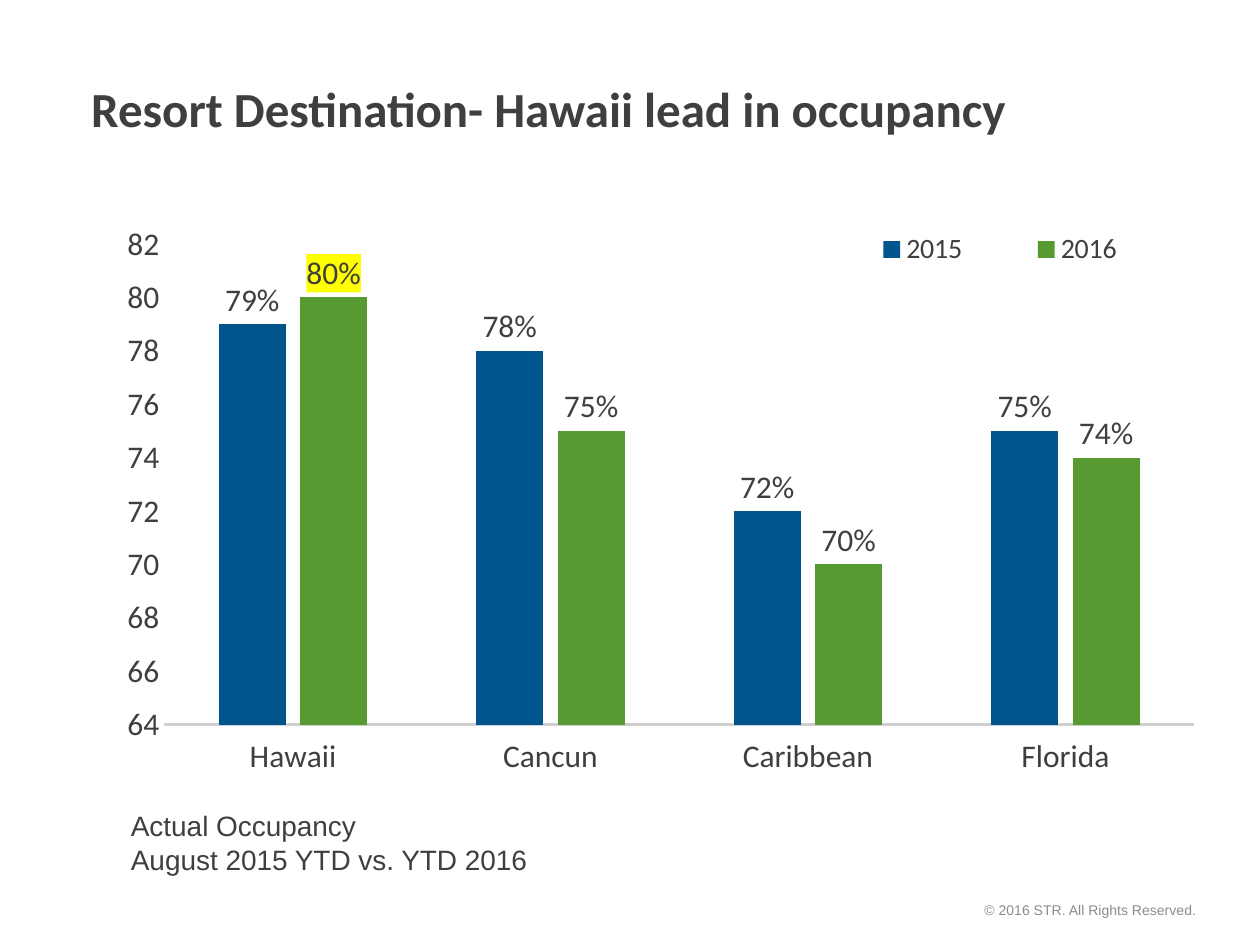
import lxml.etree
import pptx
import pptx.chart.data
import pptx.dml.color
import pptx.enum.chart
import pptx.enum.text
import pptx.oxml
import pptx.util
from pptx.util import Cm

COLORS = {
    "text": "3F3F3F",
    "credit": "8C8C8C",
    "axis": "CFCFCF",
    "2015": "00558C",
    "2016": "579A32",
    "highlight": "FFFF00",
}
OCCUPANCY = {
    "2015": (79, 78, 72, 75),
    "2016": (80, 75, 70, 74),
}
CHART_NS = "http://schemas.openxmlformats.org/drawingml/2006/chart"
DRAWING_NS = "http://schemas.openxmlformats.org/drawingml/2006/main"


def rgb(name):
    return pptx.dml.color.RGBColor.from_string(COLORS[name])


def add_text(text, left, top, width, height, size, font="Arial", color="text",
             bold=False, align="LEFT", anchor="TOP", bottom=0.13):
    box = slide.shapes.add_textbox(Cm(left), Cm(top), Cm(width), Cm(height))
    frame = box.text_frame
    frame.word_wrap = True
    frame.margin_bottom = Cm(bottom)
    frame.vertical_anchor = pptx.enum.text.MSO_ANCHOR[anchor]
    frame.text = text
    for paragraph in frame.paragraphs:
        paragraph.alignment = pptx.enum.text.PP_ALIGN[align]
        paragraph.font.size = pptx.util.Pt(size)
        paragraph.font.name = font
        paragraph.font.bold = bold
        paragraph.font.color.rgb = rgb(color)


presentation = pptx.Presentation()
presentation.slide_width = Cm(25.4)
presentation.slide_height = Cm(19.05)
slide = presentation.slides.add_slide(presentation.slide_layouts[6])

add_text("© 2016 STR. All Rights Reserved.", 17.72, 18.05, 6.65, 0.61, 8,
         color="credit", align="RIGHT")
add_text("Resort Destination- Hawaii lead in occupancy", 1.59, 1.32, 22.5, 2.24, 28,
         font="Calibri", bold=True, anchor="MIDDLE", bottom=0.67)

chart_data = pptx.chart.data.CategoryChartData()
chart_data.categories = ["Hawaii", "Cancun", "Caribbean", "Florida"]
for year, values in OCCUPANCY.items():
    chart_data.add_series(year, values)
chart = slide.shapes.add_chart(
    pptx.enum.chart.XL_CHART_TYPE.COLUMN_CLUSTERED,
    Cm(1.7), Cm(4.41), Cm(22.4), Cm(11.28), chart_data).chart
chart.has_title = False
chart.font.name = "Calibri"
chart.font.size = pptx.util.Pt(18)
chart.font.color.rgb = rgb("text")

category_axis = chart.category_axis
category_axis.tick_label_position = pptx.enum.chart.XL_TICK_LABEL_POSITION.LOW
category_axis.format.line.color.rgb = rgb("axis")
category_axis.format.line.width = pptx.util.Pt(1.5)
value_axis = chart.value_axis
value_axis.minimum_scale = 64
value_axis.maximum_scale = 82
value_axis.major_unit = 2
value_axis.has_major_gridlines = False
value_axis.format.line.fill.background()
value_axis.tick_labels.number_format = "0"
value_axis.tick_labels.number_format_is_linked = False
for axis in (category_axis, value_axis):
    axis.major_tick_mark = pptx.enum.chart.XL_TICK_MARK.NONE

chart.has_legend = True
chart.legend.position = pptx.enum.chart.XL_LEGEND_POSITION.TOP
chart.legend.include_in_layout = False
chart.legend.font.size = pptx.util.Pt(16)
chart.legend.font.name = "Calibri"
chart.legend.font.color.rgb = rgb("text")

plot = chart.plots[0]
plot.gap_width = 164
plot.overlap = -22
plot.vary_by_categories = False
outside_end = pptx.enum.chart.XL_LABEL_POSITION.OUTSIDE_END
for series in plot.series:
    series.format.fill.solid()
    series.format.fill.fore_color.rgb = rgb(series.name)
    labels = series.data_labels
    labels.show_value = True
    labels.position = outside_end
    labels.number_format = '0"%"'
    labels.number_format_is_linked = False

leader_label = plot.series[1].points[0].data_label
leader_label.font.size = pptx.util.Pt(18)
leader_label.font.color.rgb = rgb("text")
leader_label.position = outside_end
label_element = plot.series[1].data_labels._element.find(f"{{{CHART_NS}}}dLbl")
text_properties = label_element.find(f"{{{CHART_NS}}}txPr")
for old in label_element.findall(f"{{{CHART_NS}}}spPr"):
    label_element.remove(old)
for xml in (
    f'<c:numFmt xmlns:c="{CHART_NS}" formatCode="0&quot;%&quot;" sourceLinked="0"/>',
    f'<c:spPr xmlns:c="{CHART_NS}" xmlns:a="{DRAWING_NS}"><a:solidFill>'
    f'<a:srgbClr val="{COLORS["highlight"]}"/></a:solidFill></c:spPr>',
):
    text_properties.addprevious(pptx.oxml.parse_xml(xml))

plot_area = chart._chartSpace.chart.plotArea
for old in plot_area.findall(f"{{{CHART_NS}}}layout"):
    plot_area.remove(old)
for parent, index, target, bounds in (
    (plot_area, 0, '<c:layoutTarget val="inner"/>', (0.072, 0.045, 0.928, 0.859)),
    (chart.legend._element, 1, "", (0.66, 0.02, 0.33, 0.07)),
):
    modes = "".join(f'<c:{edge}Mode val="edge"/>' for edge in "xy")
    sizes = "".join(f'<c:{key} val="{value}"/>' for key, value in zip("xywh", bounds))
    parent.insert(index, pptx.oxml.parse_xml(
        f'<c:layout xmlns:c="{CHART_NS}"><c:manualLayout>{target}{modes}{sizes}'
        "</c:manualLayout></c:layout>"))

add_text("Actual Occupancy\vAugust 2015 YTD vs. YTD 2016", 2.39, 16.18, 20.52, 1.63, 16)

presentation.save("out.pptx")
